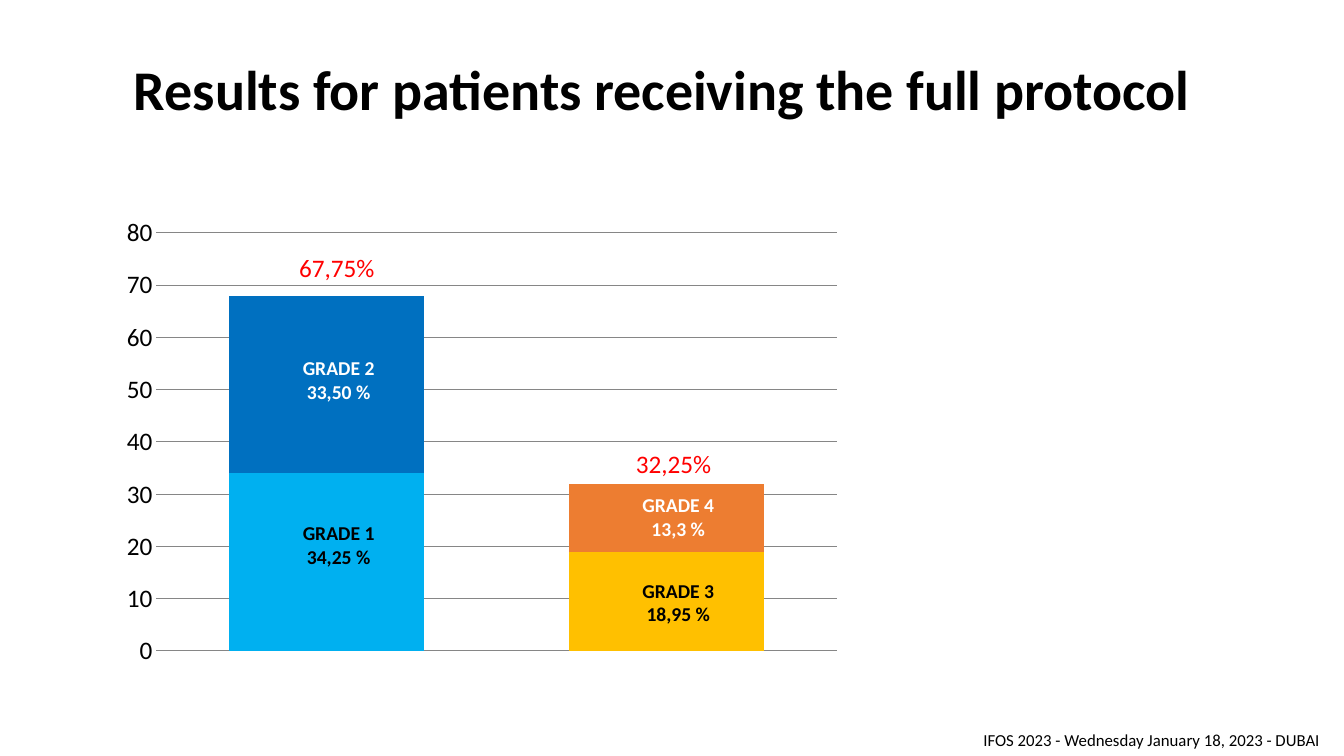
from lxml import etree
from pptx import Presentation
from pptx.chart.data import CategoryChartData
from pptx.dml.color import RGBColor
from pptx.enum.chart import XL_CHART_TYPE, XL_TICK_MARK
from pptx.enum.text import MSO_ANCHOR, PP_ALIGN
from pptx.oxml.ns import qn
from pptx.util import Pt

FONT = "Calibri"
BLACK = RGBColor(0x00, 0x00, 0x00)
WHITE = RGBColor(0xFF, 0xFF, 0xFF)
RED = RGBColor(0xFF, 0x00, 0x00)
GRID_GRAY = RGBColor(0x86, 0x86, 0x86)
LIGHT_BLUE = RGBColor(0x00, 0xB0, 0xF0)
DARK_BLUE = RGBColor(0x00, 0x70, 0xC0)
AMBER = RGBColor(0xFF, 0xC0, 0x00)
ORANGE = RGBColor(0xED, 0x7D, 0x31)

# Content
TITLE = "Results for patients receiving the full protocol"
FOOTER = "IFOS 2023 - Wednesday January 18, 2023 - DUBAI"
CATEGORIES = ["1", "2"]
SERIES = [  # name, values, colour of each bar part
    ("Series 1", (34, 19), (LIGHT_BLUE, AMBER)),
    ("Series 2", (34, 13), (DARK_BLUE, ORANGE)),
]
GRADES = [  # lines, column, top, colour
    (("GRADE 1", "34,25 %"), 0, 368.6, BLACK),
    (("GRADE 2", "33,50 %"), 0, 251, WHITE),
    (("GRADE 3", "18,95 %"), 1, 409.7, BLACK),
    (("GRADE 4", "13,3 %"), 1, 348.7, WHITE),
]
TOTALS = [("67,75%", 206.6, 176.8), ("32,25%", 447.1, 316.8)]  # text, left, top

# Layout in points; the plot frame is a share of the chart
CHART_BOX = (79.9, 148.3, 528.5, 334.1)
PLOT_FRAME = {"x": 0.06, "y": 0.054, "w": 0.92, "h": 0.894}
GRADE_LEFT, COLUMN_STEP = 204.5, 242.6


def add_text(slide, box, lines, size, color, bold=False, align=PP_ALIGN.LEFT,
             wrap=True, spacing=None):
    shape = slide.shapes.add_textbox(*(Pt(value) for value in box))
    frame = shape.text_frame
    frame.word_wrap = wrap
    frame.vertical_anchor = MSO_ANCHOR.TOP
    for index, line in enumerate(lines):
        paragraph = frame.add_paragraph() if index else frame.paragraphs[0]
        paragraph.alignment = align
        if spacing:
            paragraph.line_spacing = spacing
        run = paragraph.add_run()
        run.text = line
        run.font.name = FONT
        run.font.size = Pt(size)
        run.font.bold = bold
        run.font.color.rgb = color


def set_plot_frame(chart):
    plot_area = chart.element.find(".//" + qn("c:plotArea"))
    layout = plot_area.find(qn("c:layout"))
    if layout is None:
        layout = etree.Element(qn("c:layout"))
        plot_area.insert(0, layout)
    manual = etree.SubElement(layout, qn("c:manualLayout"))
    settings = {"layoutTarget": "inner", "xMode": "edge", "yMode": "edge", **PLOT_FRAME}
    for name, value in settings.items():
        etree.SubElement(manual, qn("c:" + name)).set("val", str(value))


def add_grade_chart(slide):
    data = CategoryChartData()
    data.categories = CATEGORIES
    for name, values, _ in SERIES:
        data.add_series(name, values)
    chart = slide.shapes.add_chart(
        XL_CHART_TYPE.COLUMN_STACKED, *(Pt(value) for value in CHART_BOX), data).chart
    chart.has_legend = False
    chart.has_title = False
    chart.font.name = FONT
    chart.font.size = Pt(18)
    chart.font.color.rgb = BLACK

    # Bars
    plot = chart.plots[0]
    plot.vary_by_categories = False
    plot.gap_width = 75
    plot.overlap = 100
    for series, (_, _, colors) in zip(plot.series, SERIES):
        for index, color in enumerate(colors):
            fill = series.points[index].format.fill
            fill.solid()
            fill.fore_color.rgb = color

    # Axes
    chart.category_axis.visible = False
    axis = chart.value_axis
    axis.minimum_scale = 0
    axis.maximum_scale = 80
    axis.major_unit = 10
    axis.major_tick_mark = XL_TICK_MARK.NONE
    axis.minor_tick_mark = XL_TICK_MARK.NONE
    axis.format.line.fill.background()
    axis.has_major_gridlines = True
    grid_line = axis.major_gridlines.format.line
    grid_line.color.rgb = GRID_GRAY
    grid_line.width = Pt(0.75)
    set_plot_frame(chart)


def main():
    presentation = Presentation()
    presentation.slide_width = Pt(960)
    presentation.slide_height = Pt(540)
    slide = presentation.slides.add_slide(presentation.slide_layouts[6])

    # Title and footer
    add_text(slide, (88.6, 41, 828, 59.8), [TITLE], 40, BLACK, bold=True, spacing=0.9)
    add_text(slide, (695.3, 517.7, 266.4, 25.9), [FOOTER], 12, BLACK, wrap=False)

    # Chart with its labels
    add_grade_chart(slide)
    for lines, column, top, color in GRADES:
        left = GRADE_LEFT + column * COLUMN_STEP
        add_text(slide, (left, top, 74.9, 41), lines, 14, color, bold=True,
                 align=PP_ALIGN.CENTER)
    for text, left, top in TOTALS:
        add_text(slide, (left, top, 77, 28.8), [text], 18, RED, wrap=False)

    presentation.save("out.pptx")


if __name__ == "__main__":
    main()
